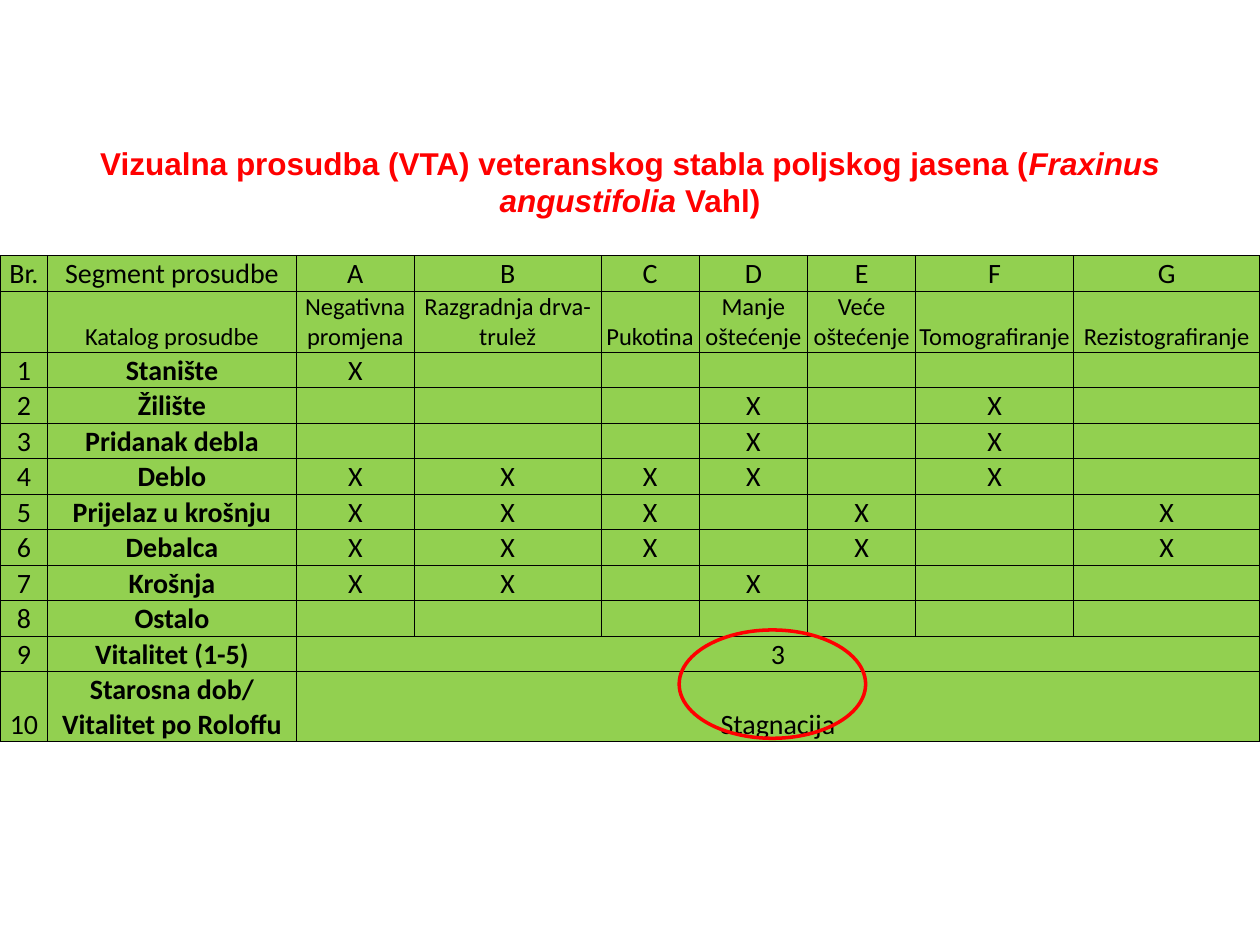
from lxml import etree
from pptx import Presentation, util as u
from pptx.dml.color import RGBColor
from pptx.enum import shapes, text
from pptx.oxml.ns import qn

HUES = {"cell": "92D050", "ink": "000000", "mark": "FF0000"}
WIDTHS = [0.38, 1.97, 0.94, 1.48, 0.78, 0.86, 0.86, 1.25, 1.48]
HEAD = ["Br.", "Segment prosudbe", *"ABCDEFG"]
TERMS = ["", "Katalog prosudbe", "Negativna promjena", "Razgradnja drva-trulež",
         "Pukotina", "Manje oštećenje", "Veće oštećenje", "Tomografiranje",
         "Rezistografiranje"]
MARKS = [("Stanište", "A"), ("Žilište", "DF"), ("Pridanak debla", "DF"),
         ("Deblo", "ABCDF"), ("Prijelaz u krošnju", "ABCEG"),
         ("Debalca", "ABCEG"), ("Krošnja", "ABD"), ("Ostalo", "")]
TOTALS = [("Vitalitet (1-5)", "3"), ("Starosna dob/\nVitalitet po Roloffu", "Stagnacija")]
TITLE = [("Vizualna prosudba (VTA) veteranskog stabla poljskog jasena (", False),
         ("Fraxinus angustifolia ", True), ("Vahl)", False)]


def hue(key):
    return RGBColor.from_string(HUES[key])


def apply(item, form):
    for key, val in form.items():
        setattr(item, key, val)


def paint(font, key, **form):
    apply(font, form)
    font.color.rgb = hue(key)


def place(item, box):
    apply(item, dict(zip(("left", "top", "width", "height"), map(u.Inches, box))))


def edge(cell):
    props = cell._tc.get_or_add_tcPr()
    for side in ("lnL", "lnR", "lnT", "lnB"):
        line = etree.SubElement(props, qn("a:" + side), w=str(u.Pt(0.5)))
        fill = etree.SubElement(line, qn("a:solidFill"))
        etree.SubElement(fill, qn("a:srgbClr"), val=HUES["ink"])


def fill_cell(cell, words, size, bold):
    edge(cell)
    cell.fill.solid()
    cell.fill.fore_color.rgb = hue("cell")
    pad = u.Inches(0.01)
    apply(cell, {"margin_left": pad, "margin_right": pad, "margin_top": pad,
                 "margin_bottom": 0, "vertical_anchor": text.MSO_ANCHOR.BOTTOM})
    cell.text = words
    for para in cell.text_frame.paragraphs:
        para.alignment = text.PP_ALIGN.CENTER
        for run in para.runs:
            paint(run.font, "ink", name="Calibri", size=u.Pt(size), bold=bold)
        if not words:
            etree.SubElement(para._p, qn("a:endParaRPr"), sz=str(size * 100))


def add_title(slide, box):
    title = slide.shapes.title
    place(title, box)
    frame = title.text_frame
    apply(frame, {"word_wrap": True, "auto_size": text.MSO_AUTO_SIZE.NONE,
                  "vertical_anchor": text.MSO_ANCHOR.TOP})
    para = frame.paragraphs[0]
    para.alignment = text.PP_ALIGN.CENTER
    for words, slant in TITLE:
        run = para.add_run()
        run.text = words
        paint(run.font, "mark", name="Arial", size=u.Pt(18), bold=True, italic=slant)


def add_grid(slide, box):
    rows = [HEAD, TERMS]
    for num, (part, marks) in enumerate(MARKS, 1):
        rows.append([str(num), part] + ["X" if key in marks else "" for key in HEAD[2:]])
    for num, (part, score) in enumerate(TOTALS, len(MARKS) + 1):
        rows.append([str(num), part, score] + [""] * 6)
    highs = [0.28, 0.48] + [0.28] * 9 + [0.55]
    grid = slide.shapes.add_table(len(rows), len(WIDTHS), *map(u.Inches, box)).table
    for col, wide in zip(grid.columns, WIDTHS):
        col.width = u.Inches(wide)
    for row, high in zip(grid.rows, highs):
        row.height = u.Inches(high)
    for r, row in enumerate(rows):
        for c, words in enumerate(row):
            fill_cell(grid.cell(r, c), words, 14 if r == 1 else 16, c == 1 and r > 1)
    for r in range(len(rows) - len(TOTALS), len(rows)):
        grid.cell(r, 2).merge(grid.cell(r, len(WIDTHS) - 1))


def add_ring(slide, box):
    ring = slide.shapes.add_shape(shapes.MSO_SHAPE.OVAL, *map(u.Inches, box))
    ring.shadow.inherit = False
    ring.fill.background()
    ring.line.color.rgb = hue("mark")
    ring.line.width = u.Pt(2)


def main():
    deck = Presentation()
    apply(deck, {"slide_width": u.Inches(10), "slide_height": u.Inches(7.5)})
    slide = deck.slides.add_slide(deck.slide_layouts[5])
    add_title(slide, (0, 1.09, 10, 0.71))
    add_grid(slide, (0, 2.03, 10, 3.83))
    add_ring(slide, (5.39, 5, 1.48, 0.86))
    deck.save("out.pptx")


if __name__ == "__main__":
    main()
